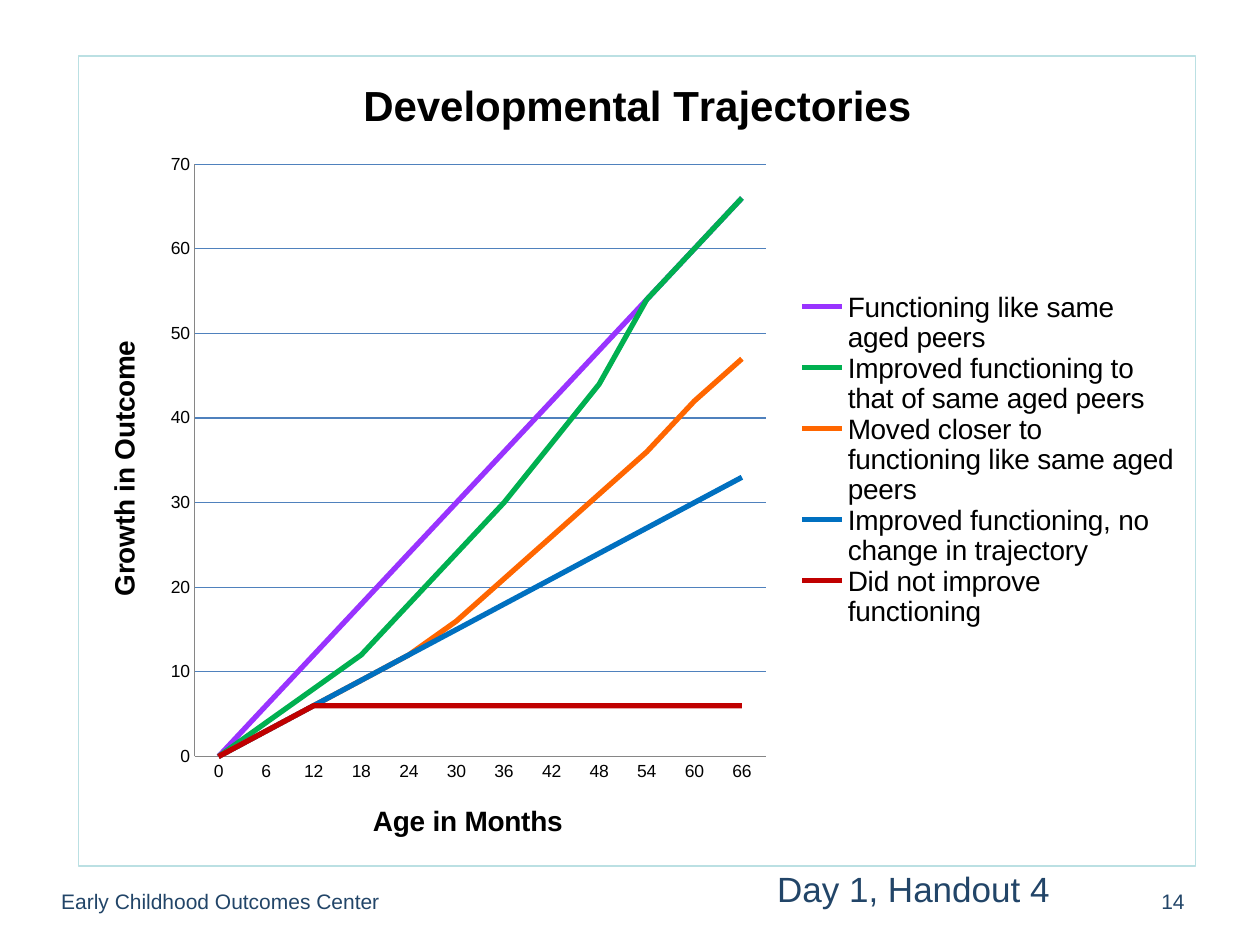
"""Build the developmental trajectories slide."""
from itertools import cycle
from lxml.etree import SubElement
from pptx import Presentation
from pptx.chart.data import CategoryChartData
from pptx.dml.color import RGBColor
from pptx.enum.chart import XL_CHART_TYPE, XL_LEGEND_POSITION, XL_TICK_MARK
from pptx.enum.text import MSO_ANCHOR, PP_ALIGN
from pptx.oxml import parse_xml
from pptx.oxml.ns import nsdecls, qn
from pptx.util import Pt

FONT = "Arial"
COLORS = {
    "ink": "000000", "navy": "224568", "grid": "4F81BD", "axis": "868686",
    "edge": "BBE0E3", "violet": "9933FF", "green": "00B050",
    "orange": "FF6600", "blue": "0070C0", "red": "C00000",
}
MONTHS = [str(month) for month in range(0, 67, 6)]
SERIES = [
    ("Functioning like same aged peers", "violet",
     (0, 6, 12, 18, 24, 30, 36, 42, 48, 54, 60, 66)),
    ("Improved functioning to that of same aged peers", "green",
     (0, 4, 8, 12, 18, 24, 30, 37, 44, 54, 60, 66)),
    ("Moved closer to functioning like same aged peers", "orange",
     (0, 3, 6, 9, 12, 16, 21, 26, 31, 36, 42, 47)),
    ("Improved functioning, no change in trajectory", "blue",
     (0, 3, 6, 9, 12, 15, 18, 21, 24, 27, 30, 33)),
    ("Did not improve functioning", "red",
     (0, 3, 6, 6, 6, 6, 6, 6, 6, 6, 6, 6)),
]
TEXTS = [
    ("Early Childhood Outcomes Center", (12, 500.5, 228, 29), 12,
     PP_ALIGN.CENTER, MSO_ANCHOR.MIDDLE),
    ("14", (516, 500.5, 168, 29), 12, PP_ALIGN.RIGHT, MSO_ANCHOR.MIDDLE),
    ("Day 1, Handout 4", (390, 492, 264, 31.5), 20,
     PP_ALIGN.CENTER, MSO_ANCHOR.TOP),
]
CHART_BOX = (44.6, 31.6, 639, 463.6)


def rgb(name):
    return RGBColor.from_string(COLORS[name])


def style(font, size, color="ink", bold=False):
    looks = {"name": FONT, "size": Pt(size), "bold": bold}
    for key, value in looks.items():
        setattr(font, key, value)
    font.color.rgb = rgb(color)


def stroke(line, color, width=0.75):
    line.color.rgb = rgb(color)
    line.width = Pt(width)


def place(parent, prior, spots, inner=False):
    for old in parent.findall(qn("c:layout")):
        parent.remove(old)
    layout = SubElement(parent, qn("c:layout"))
    manual = SubElement(layout, qn("c:manualLayout"))
    modes = [("layoutTarget", "inner")] if inner else []
    modes += [("xMode", "edge"), ("yMode", "edge")]
    parts = [spot / side for spot, side in zip(spots, cycle(CHART_BOX[2:]))]
    for tag, value in modes + list(zip("xywh", parts)):
        SubElement(manual, qn("c:" + tag)).set("val", str(value))
    if prior:
        parent.find(qn(prior)).addnext(layout)
    else:
        parent.insert(0, layout)


def caption(title, text, size, spots):
    frame = title.text_frame
    frame.text = text
    style(frame.paragraphs[0].runs[0].font, size, bold=True)
    place(title._element, "c:tx", spots)
    return frame


def add_text(slide, text, box, size, align, anchor):
    frame = slide.shapes.add_textbox(*map(Pt, box)).text_frame
    frame.word_wrap = True
    frame.vertical_anchor = anchor
    para = frame.paragraphs[0]
    para.text = text
    para.alignment = align
    style(para.runs[0].font, size, "navy")


def add_lines(slide):
    data = CategoryChartData()
    data.categories = MONTHS
    for name, _, values in SERIES:
        data.add_series(name, values)
    chart = slide.shapes.add_chart(
        XL_CHART_TYPE.LINE, *map(Pt, CHART_BOX), data).chart
    style(chart.font, 10)
    space = chart._chartSpace
    space.find(qn("c:txPr")).addprevious(parse_xml(
        f'<c:spPr {nsdecls("c", "a")}><a:noFill/><a:ln w="9525"><a:solidFill>'
        f'<a:srgbClr val="{COLORS["edge"]}"/></a:solidFill></a:ln></c:spPr>'))

    plot = chart.plots[0]
    plot.vary_by_categories = False
    for item, (_, color, _) in zip(plot.series, SERIES):
        item.smooth = False
        stroke(item.format.line, color, 3)
    place(space.chart.plotArea, None, (66.4, 62, 326.7, 339), True)

    chart.has_title = True
    caption(chart.chart_title, "Developmental Trajectories", 24, (158.5, 8.8))
    months, growth = chart.category_axis, chart.value_axis
    caption(months.axis_title, "Age in Months", 16, (165.5, 424.8))
    frame = caption(growth.axis_title, "Growth in Outcome", 16, (12.9, 160.2))
    frame._txBody.bodyPr.set("rot", "-5400000")
    frame._txBody.bodyPr.set("vert", "horz")
    for axis in (months, growth):
        axis.major_tick_mark = axis.minor_tick_mark = XL_TICK_MARK.NONE
        stroke(axis.format.line, "axis")
    for key, value in {"minimum_scale": 0, "maximum_scale": 70,
                       "major_unit": 10, "has_major_gridlines": True}.items():
        setattr(growth, key, value)
    stroke(growth.major_gridlines.format.line, "grid")

    chart.has_legend = True
    legend = chart.legend
    legend.position = XL_LEGEND_POSITION.RIGHT
    legend.include_in_layout = False
    style(legend.font, 16)
    place(legend._element, "c:legendPos", (411.7, 135.2, 217, 192))


def main():
    deck = Presentation()
    deck.slide_width, deck.slide_height = Pt(720), Pt(540)
    slide = deck.slides.add_slide(deck.slide_layouts[6])
    add_lines(slide)
    for entry in TEXTS:
        add_text(slide, *entry)
    deck.save("out.pptx")


if __name__ == "__main__":
    main()
